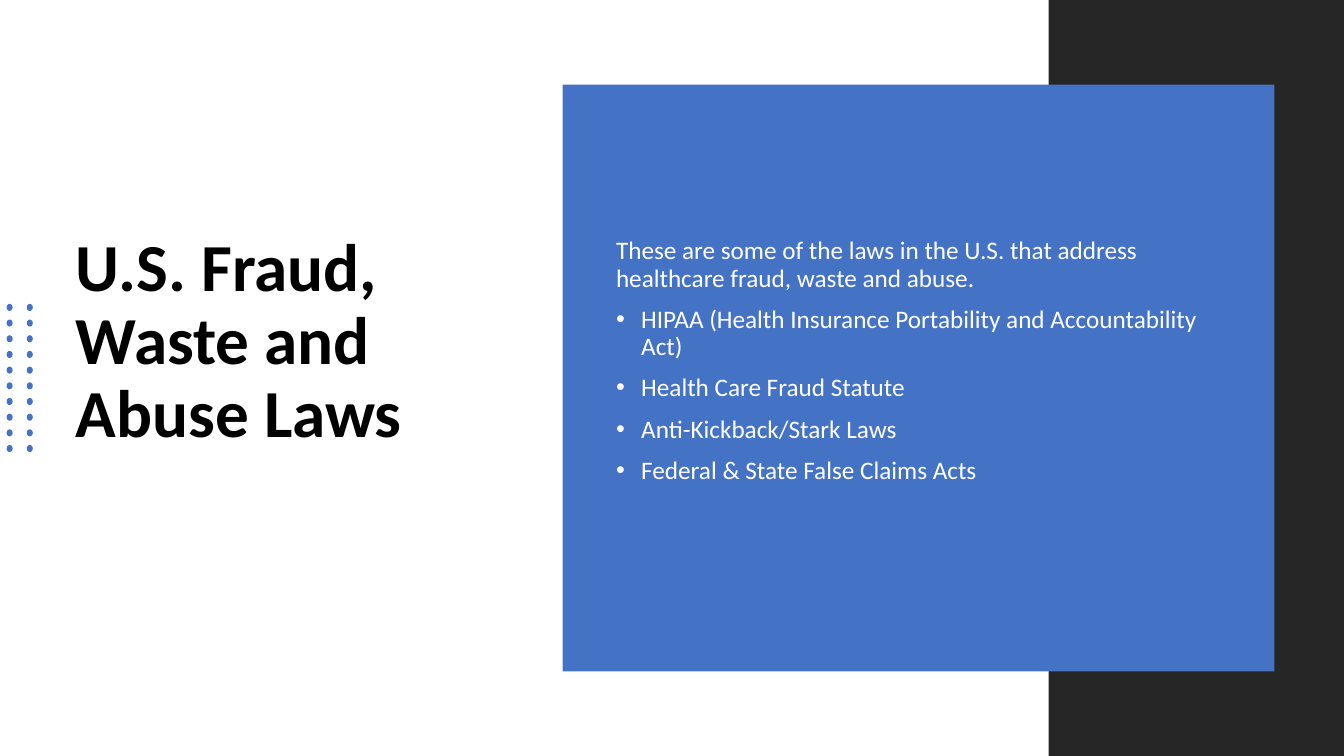
from lxml import etree
from pptx import Presentation
from pptx.dml.color import RGBColor
from pptx.enum.shapes import MSO_SHAPE
from pptx.enum.text import MSO_ANCHOR, MSO_AUTO_SIZE, PP_ALIGN
from pptx.oxml.ns import qn
from pptx.util import Inches, Pt

RECT, OVAL = MSO_SHAPE.RECTANGLE, MSO_SHAPE.OVAL
MIDDLE, LEFT, NO_FIT = MSO_ANCHOR.MIDDLE, PP_ALIGN.LEFT, MSO_AUTO_SIZE.NONE
FONT = "Calibri"
BLUE, DARK, WHITE, BLACK = "4472C4", "262626", "FFFFFF", "000000"

TITLE = "U.S. Fraud, Waste and Abuse Laws"
INTRO = ("These are some of the laws in the U.S. that address "
         "healthcare fraud, waste and abuse.")
LAWS = [
    "HIPAA (Health Insurance Portability and Accountability Act)",
    "Health Care Fraud Statute",
    "Anti-Kickback/Stark Laws",
    "Federal & State False Claims Acts",
]


def color(code):
    return RGBColor.from_string(code)


def add_shape(shapes, kind, box, fill):
    shape = shapes.add_shape(kind, *map(Inches, box))
    shape.shadow.inherit = False
    shape.fill.solid()
    shape.fill.fore_color.rgb = color(fill)
    shape.line.fill.background()
    return shape


def add_dots(slide):
    group = slide.shapes.add_group_shape()
    pitch = 1.4 / 9
    for row in range(10):
        for left in (0.06, 0.26):
            box = (left, 3.02 + row * pitch, 0.07, 0.06)
            add_shape(group.shapes, OVAL, box, BLUE).rotation = 90


def place(holder, box):
    holder.left, holder.top, holder.width, holder.height = map(Inches, box)
    frame = holder.text_frame
    frame.word_wrap = True
    frame.auto_size = NO_FIT
    frame.vertical_anchor = MIDDLE
    return frame


def add_text(para, text, size, fill, bold=False):
    para.alignment = LEFT
    para.line_spacing = 0.9
    run = para.add_run()
    run.text = text
    font = run.font
    font.name, font.size, font.bold = FONT, Pt(size), bold
    font.color.rgb = color(fill)


def set_bullet(para, char=None):
    props = para._p.get_or_add_pPr()
    indent = Inches(0.25) if char else 0
    props.set("marL", str(indent))
    props.set("indent", str(-indent))
    if char:
        font = etree.SubElement(props, qn("a:buFont"))
        font.set("typeface", "Arial")
        etree.SubElement(props, qn("a:buChar")).set("char", char)
    else:
        etree.SubElement(props, qn("a:buNone"))


def add_list(frame):
    for i, text in enumerate([INTRO] + LAWS):
        para = frame.add_paragraph() if i else frame.paragraphs[0]
        add_text(para, text, 18, WHITE)
        para.space_before = Pt(10)
        set_bullet(para, "•" if i else None)


def main():
    prs = Presentation()
    prs.slide_width, prs.slide_height = Inches(13.33), Inches(7.5)
    slide = prs.slides.add_slide(prs.slide_layouts[1])

    # Title
    title = place(slide.shapes.title, (0.65, 0.78, 4.16, 5.24))
    add_text(title.paragraphs[0], TITLE, 48, BLACK, bold=True)

    # Dots, side band and panel
    add_dots(slide)
    add_shape(slide.shapes, RECT, (10.4, 0, 2.93, 7.5), DARK)
    panel = add_shape(slide.shapes, RECT, (5.58, 0.84, 7.06, 5.82), BLUE)

    # List of laws, in front of the panel
    body = slide.placeholders[1]
    add_list(place(body, (6.01, 1.1, 6.19, 4.97)))
    panel._element.addnext(body._element)

    prs.save("out.pptx")


if __name__ == "__main__":
    main()
